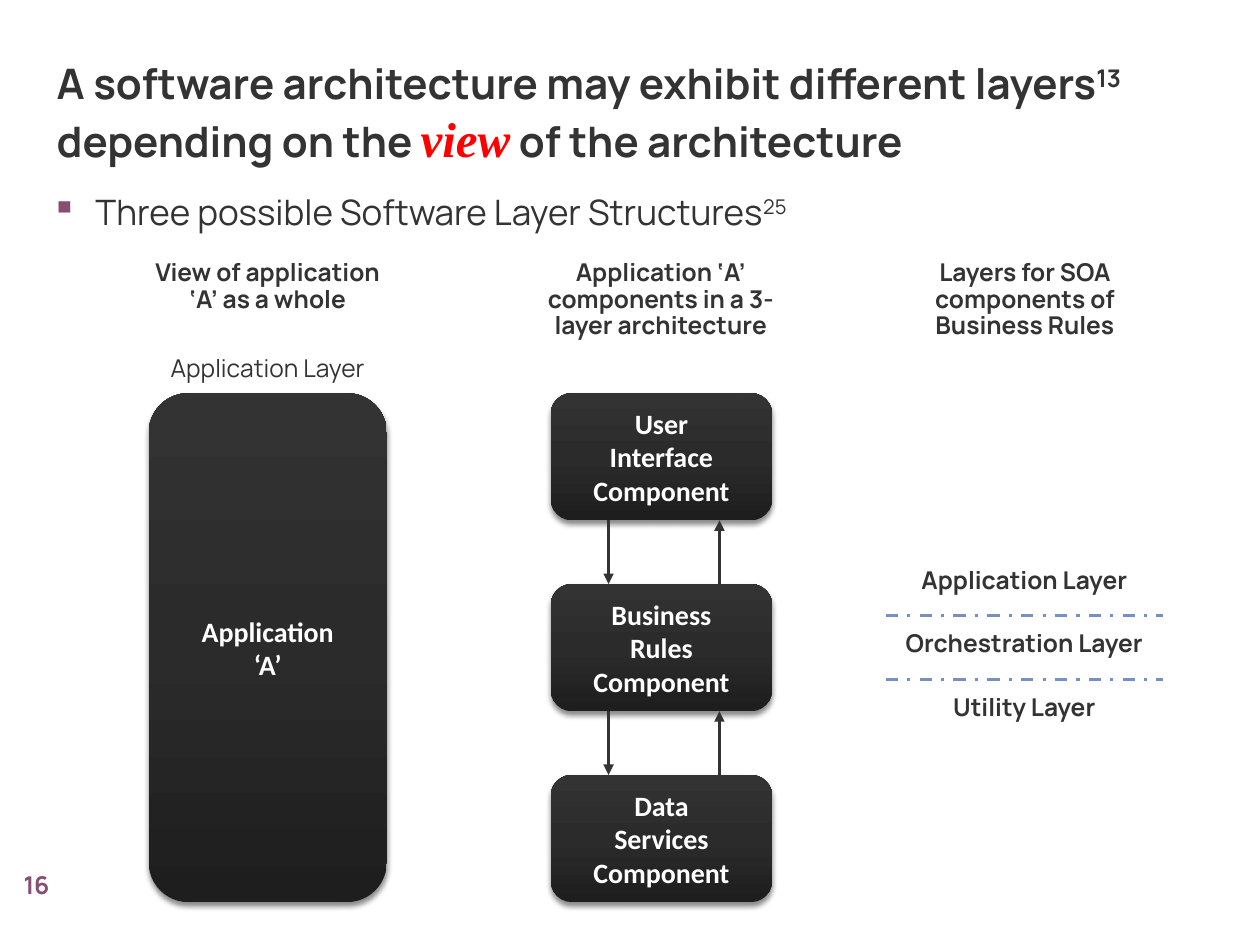
from dataclasses import dataclass

from lxml.etree import SubElement
from pptx import Presentation
from pptx.dml.color import RGBColor
from pptx.enum.dml import MSO_LINE
from pptx.enum.shapes import MSO_CONNECTOR, MSO_SHAPE
from pptx.enum.text import MSO_ANCHOR, MSO_AUTO_SIZE, PP_ALIGN
from pptx.oxml import parse_xml
from pptx.oxml.ns import nsdecls, qn
from pptx.util import Inches, Pt


@dataclass(frozen=True)
class Theme:
    font: str = "Manrope"
    block_font: str = "Calibri"
    emphasis_font: str = "Times New Roman"
    ink: str = "333333"
    accent: str = "884D72"
    emphasis: str = "FF0000"
    divider: str = "7690C3"
    white: str = "FFFFFF"
    shadow: str = "000000"
    gradient: tuple = ((0, "1E1E1E"), (50, "2B2B2B"), (100, "333333"))
    title_size: int = 24
    emphasis_size: int = 28
    bullet_size: int = 20
    block_size: int = 16
    label_size: int = 14


THEME = Theme()
LABEL_HEIGHT = 0.34


def style_font(font, name, size, color, bold=False):
    font.name = name
    font.size = Pt(size)
    font.bold = bold
    font.color.rgb = RGBColor.from_string(color)


def add_superscript(paragraph, text):
    run = paragraph.add_run()
    run.text = text
    run.font._element.set("baseline", "30000")


def add_label(slide, box, text, bold=True, color=THEME.ink):
    shape = slide.shapes.add_textbox(*map(Inches, box))
    frame = shape.text_frame
    frame.word_wrap = True
    paragraph = frame.paragraphs[0]
    paragraph.text = text
    paragraph.alignment = PP_ALIGN.CENTER
    paragraph.line_spacing = 0.9
    style_font(paragraph.font, THEME.font, THEME.label_size, color, bold)
    return shape


def add_block(slide, box, lines, wrap=True):
    shape = slide.shapes.add_shape(MSO_SHAPE.ROUNDED_RECTANGLE, *map(Inches, box))
    shape.line.fill.background()
    properties = shape._element.spPr
    stops = "".join(
        f'<a:gs pos="{position * 1000}"><a:srgbClr val="{color}"/></a:gs>'
        for position, color in THEME.gradient
    )
    gradient = parse_xml(
        f'<a:gradFill {nsdecls("a")} rotWithShape="1"><a:gsLst>{stops}</a:gsLst>'
        '<a:lin ang="16200000" scaled="0"/></a:gradFill>'
    )
    properties.find(qn("a:prstGeom")).addnext(gradient)
    properties.append(parse_xml(
        f'<a:effectLst {nsdecls("a")}><a:outerShdw blurRad="{Pt(3)}" dist="{Pt(2.4)}" '
        f'dir="5400000" rotWithShape="0"><a:srgbClr val="{THEME.shadow}">'
        '<a:alpha val="45000"/></a:srgbClr></a:outerShdw></a:effectLst>'
    ))
    frame = shape.text_frame
    frame.word_wrap = wrap
    frame.vertical_anchor = MSO_ANCHOR.MIDDLE
    frame.text = "\n".join(lines)
    for paragraph in frame.paragraphs:
        paragraph.alignment = PP_ALIGN.CENTER
        style_font(paragraph.font, THEME.block_font, THEME.block_size, THEME.white, True)


def add_line(slide, start, end, color, width):
    connector = slide.shapes.add_connector(
        MSO_CONNECTOR.STRAIGHT, *map(Inches, (*start, *end))
    )
    connector.line.color.rgb = RGBColor.from_string(color)
    connector.line.width = Pt(width)
    SubElement(connector._element.spPr, qn("a:effectLst"))
    return connector


def add_arrow(slide, start, end):
    connector = add_line(slide, start, end, THEME.ink, 1.5)
    SubElement(connector.line._get_or_add_ln(), qn("a:tailEnd"), type="triangle")


def place_title(slide, box):
    title = slide.shapes.title
    title.left, title.top, title.width, title.height = map(Inches, box)
    frame = title.text_frame
    frame.word_wrap = True
    frame.auto_size = MSO_AUTO_SIZE.NONE
    frame.vertical_anchor = MSO_ANCHOR.TOP
    paragraph = frame.paragraphs[0]
    paragraph.alignment = PP_ALIGN.LEFT
    style_font(paragraph.font, THEME.font, THEME.title_size, THEME.ink, True)
    paragraph.add_run().text = "A software architecture may exhibit different layers"
    add_superscript(paragraph, "13")
    paragraph.add_run().text = " depending on the "
    view = paragraph.add_run()
    view.text = "view"
    style_font(view.font, THEME.emphasis_font, THEME.emphasis_size, THEME.emphasis, True)
    view.font.italic = True
    paragraph.add_run().text = " of the architecture"


def place_bullet(slide, box):
    frame = slide.shapes.add_textbox(*map(Inches, box)).text_frame
    frame.word_wrap = True
    paragraph = frame.paragraphs[0]
    properties = paragraph._p.get_or_add_pPr()
    properties.set("marL", str(Inches(0.35)))
    properties.set("indent", str(-Inches(0.35)))
    bullet_color = SubElement(properties, qn("a:buClr"))
    SubElement(bullet_color, qn("a:srgbClr"), val=THEME.accent)
    SubElement(properties, qn("a:buChar"), char="▪")
    style_font(paragraph.font, THEME.font, THEME.bullet_size, THEME.ink)
    paragraph.add_run().text = "Three possible Software Layer Structures"
    add_superscript(paragraph, "25")


def place_whole_view(slide, box):
    left, top, width, height = box
    add_block(slide, box, ("Application", "‘A’"), wrap=False)
    label_width = 2.44
    label_left = left + (width - label_width) / 2
    add_label(slide, (label_left, top - LABEL_HEIGHT, label_width, LABEL_HEIGHT),
              "Application Layer", bold=False)


def place_component_stack(slide, box):
    left, top, width, height = box
    components = (
        ("User", "Interface", "Component"),
        ("Business", "Rules", "Component"),
        ("Data", "Services Component"),
    )
    block_height = 1.01
    pitch = (height - block_height) / (len(components) - 1)
    down, up = left + 0.46, left + 1.34
    for index, lines in enumerate(components):
        block_top = top + index * pitch
        if index:
            gap_top = block_top - pitch + block_height
            add_arrow(slide, (down, gap_top), (down, block_top))
            add_arrow(slide, (up, block_top), (up, gap_top))
        add_block(slide, (left, block_top, width, block_height), lines)


def place_service_layers(slide, box):
    left, top, width, height = box
    layers = ("Application Layer", "Orchestration Layer", "Utility Layer")
    pitch = (height - LABEL_HEIGHT) / (len(layers) - 1)
    for index, layer in enumerate(layers):
        label_top = top + index * pitch
        add_label(slide, (left, label_top, width, LABEL_HEIGHT), layer)
        if index:
            divider_top = label_top - 0.08
            divider = add_line(slide, (left + 0.12, divider_top),
                               (left + width - 0.12, divider_top), THEME.divider, 1.75)
            divider.line.dash_style = MSO_LINE.DASH_DOT


def place_headings(slide, top):
    headings = (
        (1.06, 0.57, "View of application ‘A’ as a whole"),
        (4.18, 0.81, "Application ‘A’ components in a 3-layer architecture"),
        (7.07, 0.81, "Layers for SOA components of Business Rules"),
    )
    for left, height, text in headings:
        add_label(slide, (left, top, 2.13, height), text)


def main():
    presentation = Presentation()
    presentation.slide_width, presentation.slide_height = Inches(10), Inches(7.5)
    slide = presentation.slides.add_slide(presentation.slide_layouts[5])
    place_title(slide, (0.35, 0.41, 9.79, 1.06))
    place_bullet(slide, (0.31, 1.46, 8.63, 0.62))
    place_headings(slide, 2.02)
    place_whole_view(slide, (1.18, 3.12, 1.89, 4.04))
    place_component_stack(slide, (4.37, 3.12, 1.76, 4.04))
    place_service_layers(slide, (6.91, 4.46, 2.44, 1.35))
    number = add_label(slide, (0, 6.83, 0.58, 0.42), "16", color=THEME.accent)
    number.text_frame.vertical_anchor = MSO_ANCHOR.MIDDLE
    presentation.save("out.pptx")


if __name__ == "__main__":
    main()
